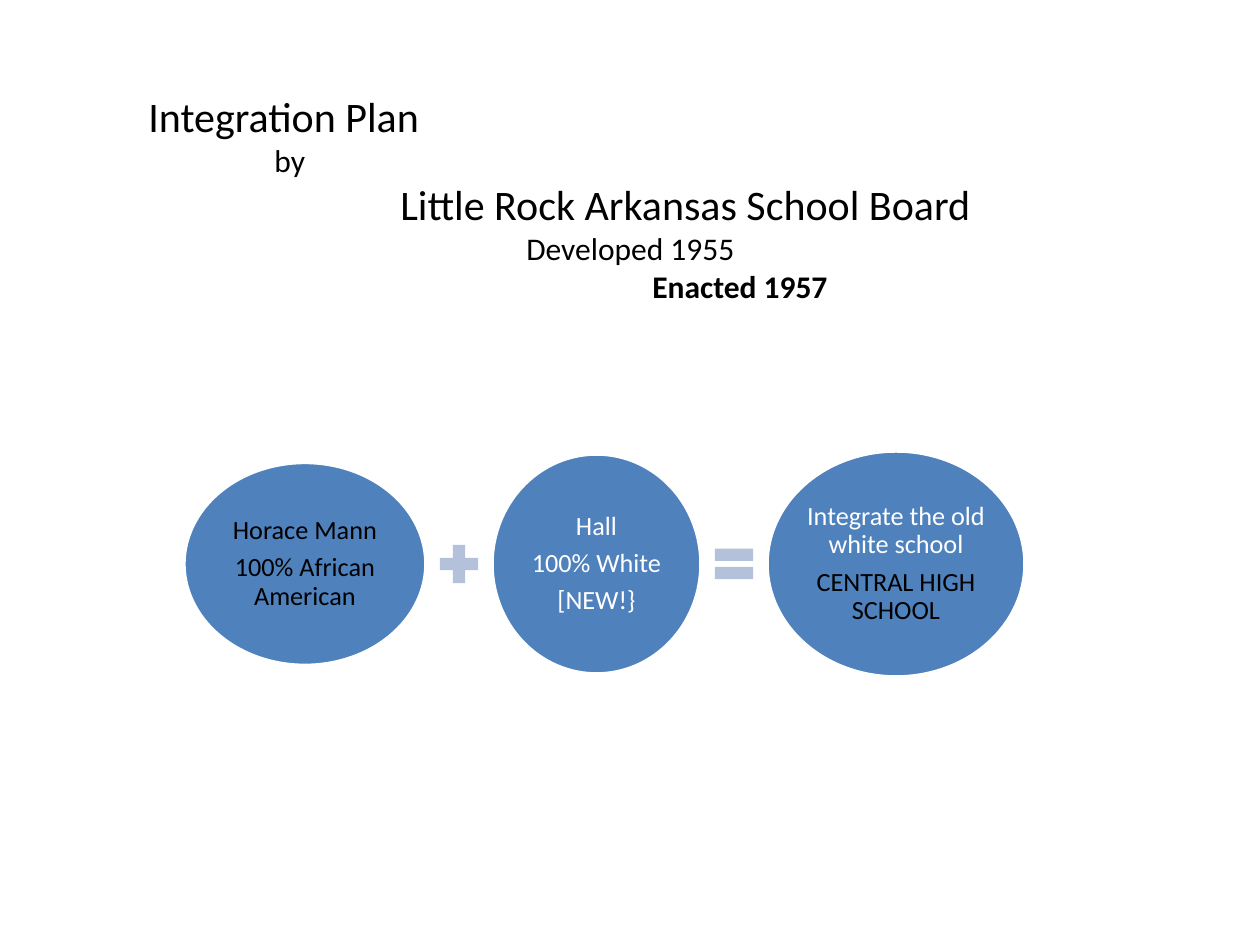
"""Builds the school integration plan slide."""
from pptx import Presentation, util as u
from pptx.dml.color import RGBColor
from pptx.enum import shapes, text

COLORS = {"blue": "4F81BD", "pale": "B3C1DB", "white": "FFFFFF", "black": "000000"}
HEADING = [
    (0, "Integration Plan", 24, False),
    (1, "by", 18, False),
    (2, "Little Rock Arkansas School Board", 24, False),
    (3, "Developed 1955", 18, False),
    (4, "Enacted 1957", 18, True),
]
OVAL, PLUS, EQUAL = (shapes.MSO_SHAPE.OVAL, shapes.MSO_SHAPE.MATH_PLUS,
                     shapes.MSO_SHAPE.MATH_EQUAL)
EQUATION = [
    (OVAL, 242, 203, [("Horace Mann", "black"), ("100% African American", "black")]),
    (PLUS, 52, 52, []),
    (OVAL, 209, 220, [("Hall", "white"), ("100% White", "white"), ("[NEW!}", "white")]),
    (EQUAL, 52, 52, []),
    (OVAL, 258, 226, [("Integrate the old white school", "white"),
                      ("CENTRAL HIGH SCHOOL", "black")]),
]
LEFT, MIDDLE, GAP, TAB = 184, 564, 7, 126


def px(n):
    return u.Emu(round(n * 914400 / 126))


def rgb(name):
    return RGBColor.from_string(COLORS[name])


def add_text(tf, words, size=15, color="black", bold=False, indent=0, **layout):
    p = tf.paragraphs[0]
    if p.runs:
        p = tf.add_paragraph()
    if indent:
        p._p.get_or_add_pPr().set("marL", str(px(indent)))
    for name, value in layout.items():
        setattr(p, name, value)
    r = p.add_run()
    r.text = words
    r.font.name, r.font.size, r.font.bold = "Calibri", u.Pt(size), bold
    r.font.color.rgb = rgb(color)


def add_heading(s):
    tf = s.shapes.add_textbox(px(136), px(84), px(935), px(267)).text_frame
    tf.word_wrap = True
    for level, words, size, bold in HEADING:
        add_text(tf, words, size=size, bold=bold, indent=level * TAB)


def add_equation(s):
    x = LEFT
    for kind, w, h, lines in EQUATION:
        sp = s.shapes.add_shape(kind, px(x), px(MIDDLE - h / 2), px(w), px(h))
        sp.shadow.inherit = False
        sp.fill.solid()
        sp.fill.fore_color.rgb = rgb("blue" if kind == OVAL else "pale")
        if kind == OVAL:
            sp.line.color.rgb, sp.line.width = rgb("white"), u.Pt(2)
        else:
            sp.line.fill.background()
        tf = sp.text_frame
        tf.word_wrap = True
        tf.vertical_anchor = text.MSO_ANCHOR.MIDDLE
        tf.margin_left = tf.margin_right = tf.margin_top = tf.margin_bottom = px(2)
        for words, color in lines:
            add_text(tf, words, color=color, alignment=text.PP_ALIGN.CENTER,
                     line_spacing=0.9, space_after=u.Pt(5))
        x += w + GAP


def main():
    prs = Presentation()
    prs.slide_width, prs.slide_height = px(1260), px(945)
    s = prs.slides.add_slide(prs.slide_layouts[6])
    add_equation(s)
    add_heading(s)
    prs.save("out.pptx")


if __name__ == "__main__":
    main()
